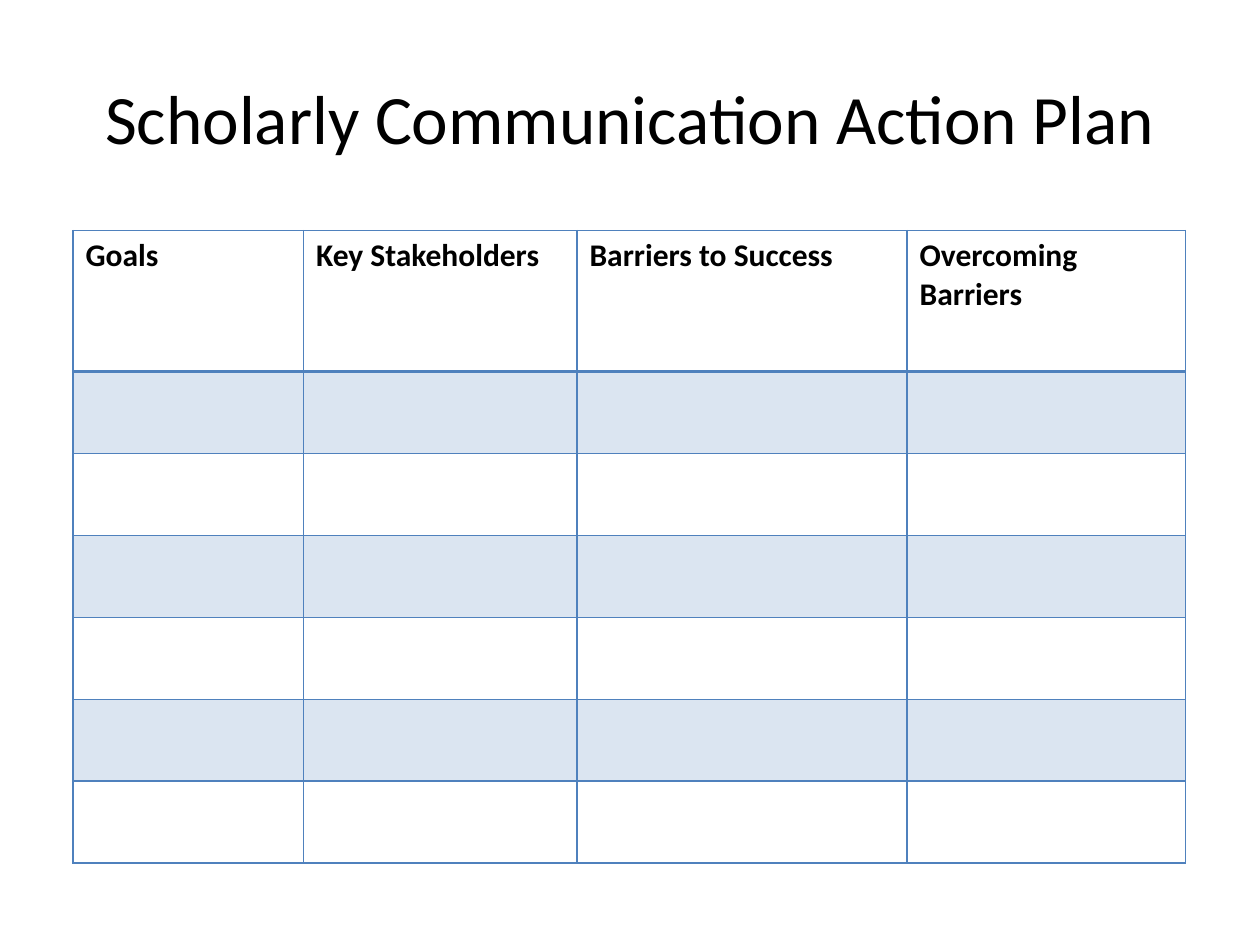
from dataclasses import dataclass
from lxml.etree import SubElement
from pptx import Presentation
from pptx.dml.color import RGBColor
from pptx.enum.text import MSO_ANCHOR as Anchor, PP_ALIGN as Align
from pptx.oxml.ns import qn
from pptx.slide import Slide
from pptx.util import Inches, Pt

HEADINGS = ["Goals", "Key Stakeholders", "Barriers to Success", "Overcoming Barriers"]
COLUMN_WIDTHS = [1.83, 2.17, 2.62, 2.21]
ROW_HEIGHTS = [1.12] + [0.65] * 6


def colour(value):
    return RGBColor.from_string(value)


@dataclass
class PlanPage:
    """Holds the style and the current slide, and draws its elements."""

    page: Slide
    font: str = "Calibri"
    ink: str = "000000"
    accent: str = "4F81BD"

    def format_text(self, para, size, bold=False):
        for span in para.runs:
            span.font.name = self.font
            span.font.size = Pt(size)
            span.font.bold = bold
            span.font.color.rgb = colour(self.ink)

    def title(self, text, left, top, width, height):
        box = self.page.shapes.add_textbox(
            Inches(left), Inches(top), Inches(width), Inches(height))
        frame = box.text_frame
        frame.word_wrap = True
        frame.vertical_anchor = Anchor.MIDDLE
        frame.text = text
        para = frame.paragraphs[0]
        para.alignment = Align.CENTER
        self.format_text(para, 39.6)

    def border(self, cell, side, width):
        line = SubElement(cell._tc.get_or_add_tcPr(), qn(f"a:ln{side}"), w=str(Pt(width)))
        fill = SubElement(line, qn("a:solidFill"))
        SubElement(fill, qn("a:srgbClr"), val=self.accent)

    def fill(self, cell, shaded):
        if not shaded:
            cell.fill.background()
            return
        cell.fill.solid()
        cell.fill.fore_color.rgb = colour(self.accent)
        tint = cell._tc.tcPr.find(f"{qn('a:solidFill')}/{qn('a:srgbClr')}")
        SubElement(tint, qn("a:alpha"), val="20000")

    def table(self, headings, widths, heights, left, top):
        table = self.page.shapes.add_table(
            len(heights), len(widths), Inches(left), Inches(top),
            Inches(sum(widths)), Inches(sum(heights))).table
        for column, width in zip(table.columns, widths):
            column.width = Inches(width)
        for index, (row, height) in enumerate(zip(table.rows, heights)):
            row.height = Inches(height)
            for cell in row.cells:
                for side in "LRTB":
                    heavy = (index, side) in ((0, "B"), (1, "T"))
                    self.border(cell, side, 2 if heavy else 1)
                self.fill(cell, index % 2 == 1)
        for cell, heading in zip(table.rows[0].cells, headings):
            cell.text_frame.text = heading
            self.format_text(cell.text_frame.paragraphs[0], 18, bold=True)


def main():
    deck = Presentation()
    deck.slide_width, deck.slide_height = Inches(10), Inches(7.5)
    plan = PlanPage(deck.slides.add_slide(deck.slide_layouts[6]))
    plan.title("Scholarly Communication Action Plan", 0.5, 0.3, 9, 1.25)
    plan.table(HEADINGS, COLUMN_WIDTHS, ROW_HEIGHTS, 0.58, 1.83)
    deck.save("out.pptx")


if __name__ == "__main__":
    main()
